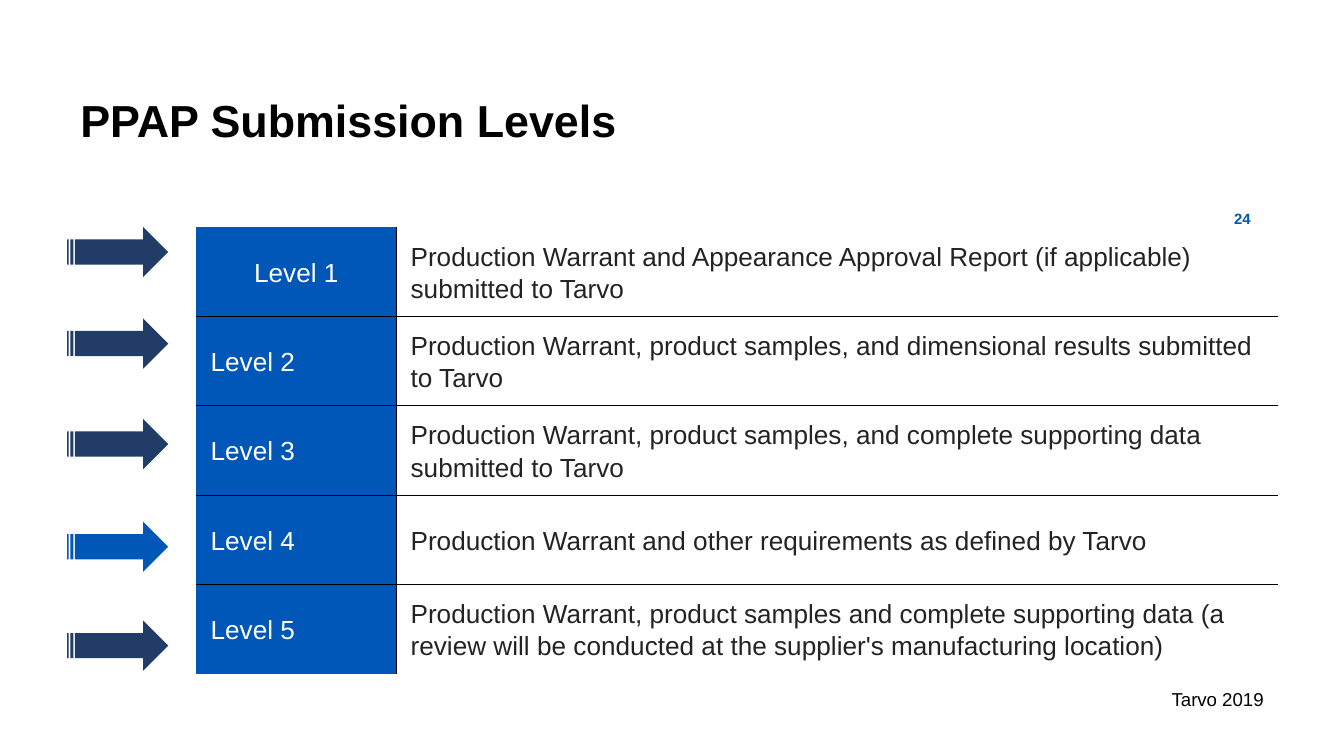
import pptx
import pptx.dml.color
import pptx.enum.shapes
import pptx.enum.text
import pptx.oxml
import pptx.oxml.ns
import pptx.util
from pptx.util import Cm, Pt

ALIGN = pptx.enum.text.PP_ALIGN
MIDDLE = pptx.enum.text.MSO_ANCHOR.MIDDLE
BLUE, NAVY, BLACK, WHITE, BODY = "0057B8", "213D67", "000000", "FFFFFF", "232323"

LEVELS = [
    ("Level 1", "Production Warrant and Appearance Approval Report (if applicable) submitted to Tarvo", 4.29, NAVY),
    ("Level 2", "Production Warrant, product samples, and dimensional results submitted to Tarvo", 6.02, NAVY),
    ("Level 3", "Production Warrant, product samples, and complete supporting data submitted to Tarvo", 7.92, NAVY),
    ("Level 4", "Production Warrant and other requirements as defined by Tarvo", 9.86, BLUE),
    ("Level 5", "Production Warrant, product samples and complete supporting data "
                "(a review will be conducted at the supplier's manufacturing location)", 11.73, NAVY),
]


def color(value):
    return pptx.dml.color.RGBColor.from_string(value)


def write(frame, text, size, ink, bold=False, align=ALIGN.LEFT):
    frame.word_wrap = True
    paragraph = frame.paragraphs[0]
    paragraph.text = text
    paragraph.alignment = align
    font = paragraph.font
    font.name, font.size, font.bold = "Arial", Pt(size), bold
    font.color.rgb = color(ink)
    return paragraph


def add_label(slide, left, top, width, height, text, size, ink, **style):
    frame = slide.shapes.add_textbox(Cm(left), Cm(top), Cm(width), Cm(height)).text_frame
    frame.margin_top = frame.margin_bottom = 0
    frame.vertical_anchor = MIDDLE
    write(frame, text, size, ink, **style)


def add_arrow(slide, top, fill):
    arrow = slide.shapes.add_shape(
        pptx.enum.shapes.MSO_SHAPE.STRIPED_RIGHT_ARROW, Cm(1.27), Cm(top), Cm(1.91), Cm(0.95))
    arrow.shadow.inherit = False
    arrow.fill.solid()
    arrow.fill.fore_color.rgb = color(fill)
    arrow.line.fill.background()


def set_borders(cell, ruled_sides):
    properties = cell._tc.get_or_add_tcPr()
    for side in "LRTB":
        paint = f'<a:solidFill><a:srgbClr val="{BLACK}"/></a:solidFill>' if side in ruled_sides else "<a:noFill/>"
        properties.append(pptx.oxml.parse_xml(
            f'<a:ln{side} {pptx.oxml.ns.nsdecls("a")} w="{Pt(0.25)}">{paint}</a:ln{side}>'))


def fill_cell(cell, text, ink, sides, fill=None, align=ALIGN.LEFT):
    set_borders(cell, sides)
    if fill:
        cell.fill.solid()
        cell.fill.fore_color.rgb = color(fill)
    else:
        cell.fill.background()
    cell.vertical_anchor = MIDDLE
    cell.margin_left = cell.margin_right = Cm(0.27)
    cell.margin_top = cell.margin_bottom = Cm(0.1)
    write(cell.text_frame, text, 14, ink, align=align).line_spacing = 1.1


def add_levels_table(slide):
    table = slide.shapes.add_table(
        len(LEVELS), 2, Cm(3.71), Cm(4.29), Cm(20.44), Cm(8.45)).table
    table.first_row = table.horz_banding = False
    table.columns[0].width, table.columns[1].width = Cm(3.78), Cm(16.66)
    last = len(LEVELS) - 1
    for index, (level, requirement, _, _) in enumerate(LEVELS):
        sides = ("T" if index > 0 else "") + ("B" if index < last else "")
        fill_cell(table.cell(index, 0), level, WHITE, "R" + sides, BLUE,
                  ALIGN.CENTER if index == 0 else ALIGN.LEFT)
        fill_cell(table.cell(index, 1), requirement, BODY, "L" + sides)


def main():
    deck = pptx.Presentation()
    deck.slide_width, deck.slide_height = Cm(25.4), Cm(14.29)
    slide = deck.slides.add_slide(deck.slide_layouts[6])
    add_label(slide, 1.27, 1.27, 21.21, 1.98, "PPAP Submission Levels", 24, BLACK, bold=True)
    add_label(slide, 16.08, 12.95, 8.05, 0.53, "Tarvo 2019", 10, BLACK, align=ALIGN.RIGHT)
    add_levels_table(slide)
    for _, _, arrow_top, arrow_fill in LEVELS:
        add_arrow(slide, arrow_top, arrow_fill)
    add_label(slide, 22.83, 3.96, 1.3, 0.33, "24", 8, BLUE, bold=True, align=ALIGN.CENTER)
    deck.save("out.pptx")


if __name__ == "__main__":
    main()
